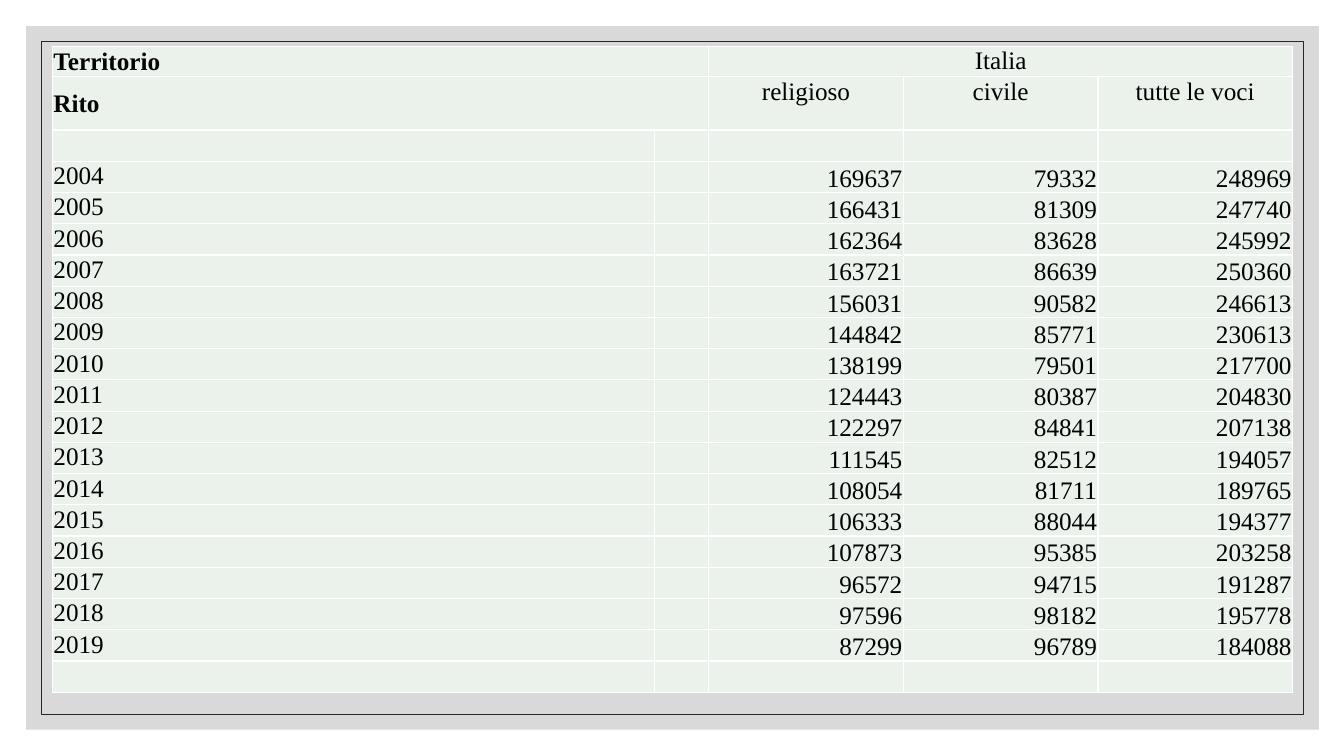
from pptx import Presentation
from pptx.dml.color import RGBColor
from pptx.enum.shapes import MSO_SHAPE
from pptx.enum.text import MSO_ANCHOR, PP_ALIGN
from pptx.util import Inches, Pt

GRAY = RGBColor(0xD9, 0xD9, 0xD9)
DARK = RGBColor(0x26, 0x26, 0x26)
MINT = RGBColor(0xEB, 0xF2, 0xEC)
BLACK = RGBColor(0, 0, 0)

START = 2004
RITES = [
    (169637, 79332), (166431, 81309), (162364, 83628), (163721, 86639),
    (156031, 90582), (144842, 85771), (138199, 79501), (124443, 80387),
    (122297, 84841), (111545, 82512), (108054, 81711), (106333, 88044),
    (107873, 95385), (96572, 94715), (97596, 98182), (87299, 96789),
]
BLANK = [""] * 5

rows = [
    ["Territorio", "", "Italia", "", ""],
    ["Rito", "", "religioso", "civile", "tutte le voci"],
    BLANK,
]
for year, (church, civil) in enumerate(RITES, START):
    rows.append([str(year), "", str(church), str(civil), str(church + civil)])
rows.append(BLANK)

deck = Presentation()
deck.slide_width = Inches(13.33)
deck.slide_height = Inches(7.5)
slide = deck.slides.add_slide(deck.slide_layouts[6])

panel = slide.shapes.add_shape(
    MSO_SHAPE.RECTANGLE, Inches(0.26), Inches(0.26), Inches(12.82), Inches(6.98))
panel.shadow.inherit = False
panel.fill.solid()
panel.fill.fore_color.rgb = GRAY
panel.line.fill.background()

frame = slide.shapes.add_shape(
    MSO_SHAPE.RECTANGLE, Inches(0.41), Inches(0.41), Inches(12.52), Inches(6.68))
frame.shadow.inherit = False
frame.fill.background()
frame.line.color.rgb = DARK
frame.line.width = Pt(0.5)

table = slide.shapes.add_table(
    len(rows), 5, Inches(0.52), Inches(0.46), Inches(12.3), Inches(6.41)).table
table.first_row = False
table.horz_banding = False
for col, width in zip(table.columns, [5.97, 0.54, 1.93, 1.93, 1.93]):
    col.width = Inches(width)
for row, height in zip(table.rows, [0.3, 0.53] + [0.31] * 18):
    row.height = Inches(height)

for r, texts in enumerate(rows):
    head = r < 2
    for c, text in enumerate(texts):
        cell = table.cell(r, c)
        cell.fill.solid()
        cell.fill.fore_color.rgb = MINT
        cell.margin_left = cell.margin_right = cell.margin_top = Inches(0.01)
        cell.margin_bottom = 0
        cell.text = text
        para = cell.text_frame.paragraphs[0]
        para.font.name = "Times New Roman"
        para.font.size = Pt(18)
        para.font.color.rgb = BLACK
        para.font.bold = head and c == 0
        if c > 1:
            para.alignment = PP_ALIGN.CENTER if head else PP_ALIGN.RIGHT
        if text and head and c == 0:
            cell.vertical_anchor = MSO_ANCHOR.MIDDLE
        elif text and not head and c > 1:
            cell.vertical_anchor = MSO_ANCHOR.BOTTOM

for r, first, last in [(0, 0, 1), (0, 2, 4), (1, 0, 1)]:
    table.cell(r, first).merge(table.cell(r, last))

deck.save("out.pptx")
